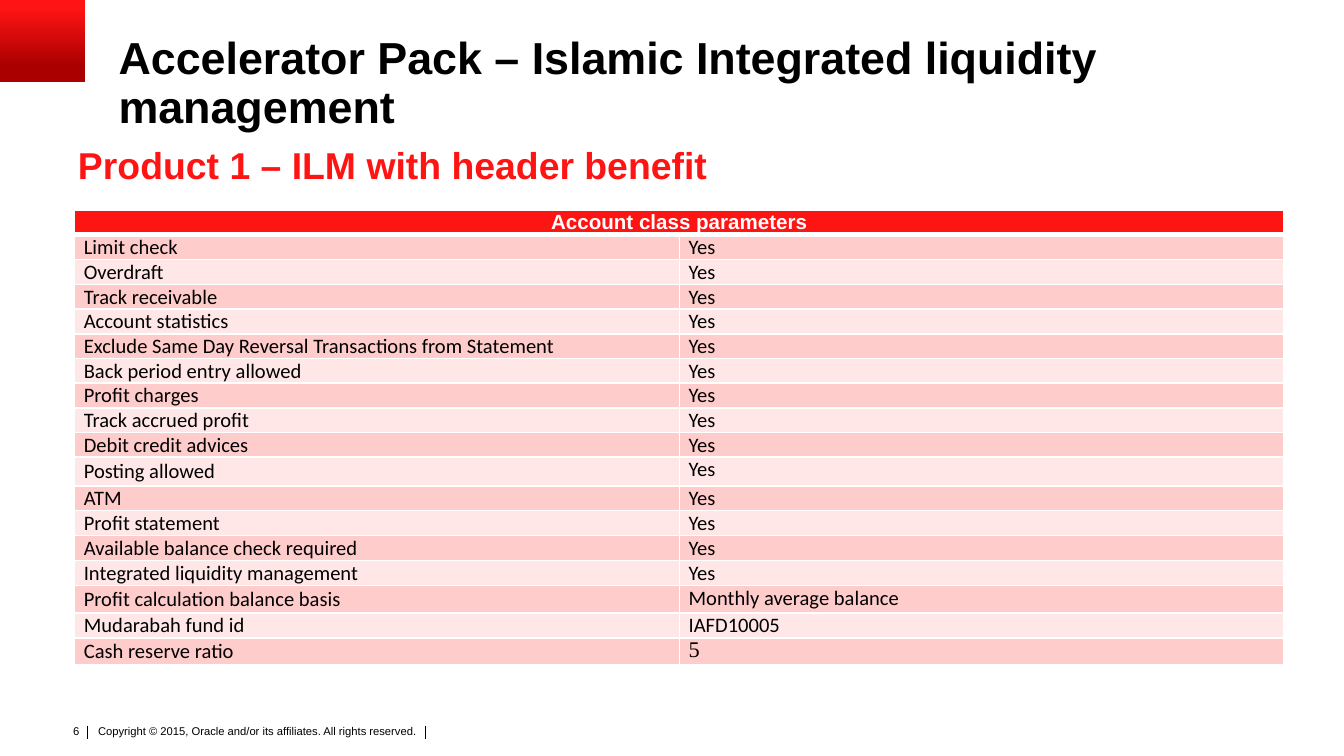
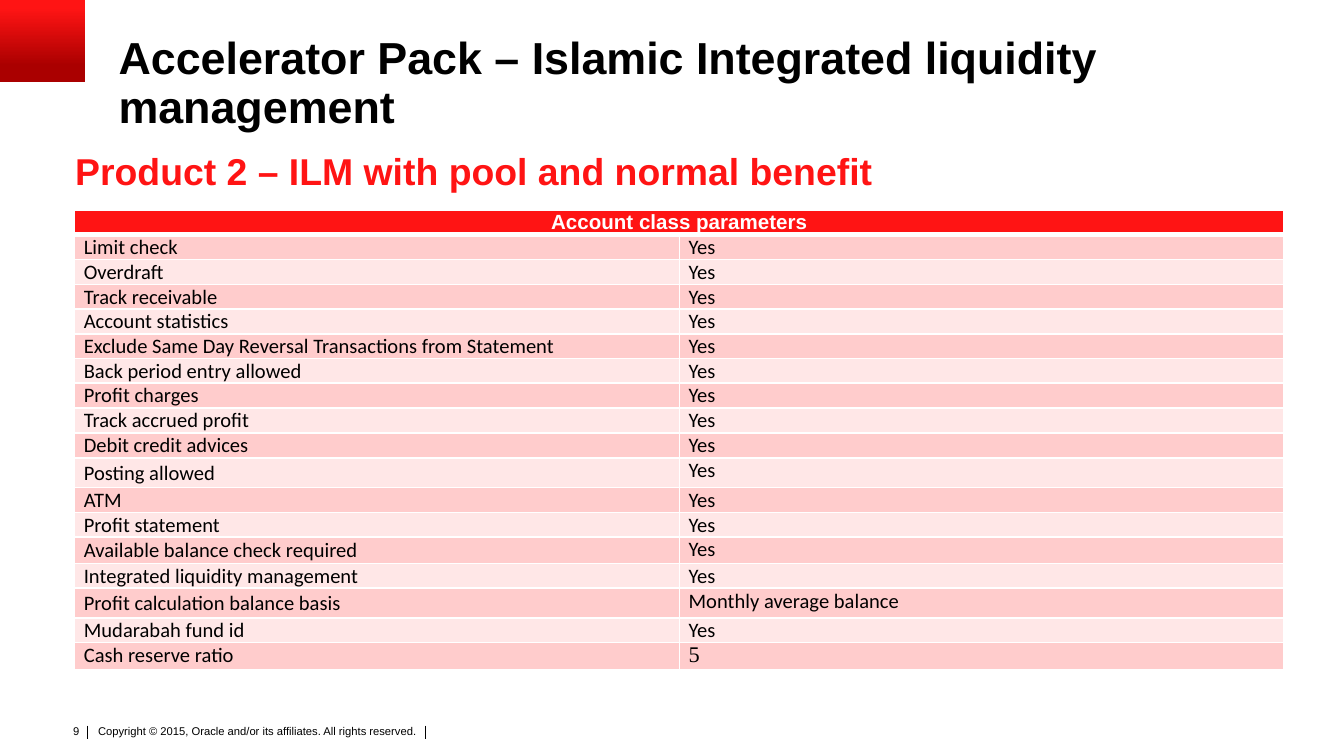
from lxml.etree import SubElement
from pptx import Presentation
from pptx.dml.color import RGBColor
from pptx.enum.shapes import MSO_CONNECTOR as CONN, MSO_SHAPE as SHAPE
from pptx.enum.text import MSO_ANCHOR as ANCHOR, MSO_AUTO_SIZE as AUTO, PP_ALIGN as ALIGN
from pptx.oxml.ns import qn
from pptx.util import Pt

# Shared colours, text styles and wording
RED, DARK_RED, BLACK, WHITE = "FF1414", "AA0000", "000000", "FFFFFF"
BANDS = ("FFCCCC", "FFE7E7")
TITLE_FONT = dict(name="Arial", size=Pt(24), bold=True)
SUBTITLE_FONT = dict(name="Arial", size=Pt(20), bold=True)
HEADER_FONT = dict(name="Arial", size=Pt(11), bold=True)
CELL_FONT = dict(name="Calibri", size=Pt(11), bold=False)
RATIO_FONT = dict(name="Times New Roman", size=Pt(12), bold=False)
FOOTER_FONT = dict(name="Arial", size=Pt(6), bold=False)

TITLE = "Accelerator Pack – Islamic Integrated liquidity management"
COPYRIGHT = "Copyright © 2015, Oracle and/or its affiliates. All rights reserved."
YES_PARAMETERS = [
    "Limit check", "Overdraft", "Track receivable", "Account statistics",
    "Exclude Same Day Reversal Transactions from Statement",
    "Back period entry allowed", "Profit charges", "Track accrued profit",
    "Debit credit advices", "Posting allowed", "ATM", "Profit statement",
    "Available balance check required", "Integrated liquidity management",
]
ROW_HEIGHT = 13.25

# What differs between the slides; tall_rows maps row number to height
PRODUCTS = [
    dict(number="6", subtitle="Product 1 – ILM with header benefit",
         left=41.8, top=76.3, title_height=49, fund="IAFD10005",
         tall_rows={10: 15.4, 13: 13.5, 15: 14.9, 17: 13.6}),
    dict(number="9", subtitle="Product 2 – ILM with pool and normal benefit",
         left=40.3, top=79.2, title_height=31.7, fund="Yes",
         tall_rows={8: 13.5, 9: 13.5, 10: 15.8, 13: 14.2, 15: 15.8, 17: 13.6}),
]


def rgb(color):
    return RGBColor.from_string(color)


def set_attrs(obj, values):
    for name, value in values.items():
        setattr(obj, name, value)


def set_margins(obj, x, y):
    set_attrs(obj, dict(margin_left=Pt(x), margin_right=Pt(x),
                        margin_top=Pt(y), margin_bottom=Pt(y)))


def write(tf, text, font, color, **paragraph):
    p = tf.paragraphs[0]
    set_attrs(p, paragraph)
    r = p.add_run()
    r.text = text
    set_attrs(r.font, font)
    r.font.color.rgb = rgb(color)


def add_text(slide, box, text, font, color, margins=(0, 0), wrap=True, **paragraph):
    sp = slide.shapes.add_textbox(*map(Pt, box))
    sp.text_frame.word_wrap = wrap
    set_margins(sp.text_frame, *margins)
    write(sp.text_frame, text, font, color, **paragraph)


def add_title(slide, height):
    sp = slide.shapes.title
    set_attrs(sp, dict(left=Pt(63.5), top=Pt(19.4), width=Pt(648), height=Pt(height)))
    tf = sp.text_frame
    set_attrs(tf, dict(word_wrap=True, auto_size=AUTO.NONE, vertical_anchor=ANCHOR.TOP))
    set_margins(tf, 0, 0)
    write(tf, TITLE, TITLE_FONT, BLACK, alignment=ALIGN.LEFT, line_spacing=0.9)


def add_corner(slide):
    sp = slide.shapes.add_shape(SHAPE.RECTANGLE, 0, 0, Pt(45.5), Pt(44))
    sp.shadow.inherit = False
    sp.line.fill.background()
    sp.fill.gradient()
    sp.fill.gradient_angle = 90
    for stop, position, color in zip(sp.fill.gradient_stops, (0.2, 0.9), (DARK_RED, RED)):
        stop.position = position
        stop.color.rgb = rgb(color)


def add_divider(slide, x):
    line = slide.shapes.add_connector(CONN.STRAIGHT, Pt(x), Pt(388.8), Pt(x), Pt(396))
    line.line.width = Pt(0.5)
    line.line.color.rgb = rgb(BLACK)
    SubElement(line._element.spPr, qn("a:effectLst"))


def add_footer(slide, number):
    add_text(slide, (49.7, 386.6, 197.3, 17.3), COPYRIGHT, FOOTER_FONT, BLACK, (2.9, 1.45))
    for x in (46.8, 228):
        add_divider(slide, x)
    add_text(slide, (28.1, 384.5, 21.6, 14.4), number, FOOTER_FONT, BLACK, (7.2, 3.6),
             wrap=False, alignment=ALIGN.RIGHT)


def set_borders(cell, bottom=1):
    tcPr = cell._tc.get_or_add_tcPr()
    for side, width in dict(L=1, R=1, T=1, B=bottom).items():
        ln = SubElement(tcPr, qn(f"a:ln{side}"), w=str(Pt(width)))
        SubElement(SubElement(ln, qn("a:solidFill")), qn("a:srgbClr"), val=WHITE)


def format_cell(cell, fill, anchor=ANCHOR.MIDDLE, bottom=1):
    set_borders(cell, bottom)
    cell.fill.solid()
    cell.fill.fore_color.rgb = rgb(fill)
    cell.vertical_anchor = anchor
    set_margins(cell, 5, 0)


def add_parameters(slide, fund, tall_rows):
    rows = [(name, "Yes") for name in YES_PARAMETERS] + [
        ("Profit calculation balance basis", "Monthly average balance"),
        ("Mudarabah fund id", fund),
        ("Cash reserve ratio", "5"),
    ]
    heights = [tall_rows.get(i, ROW_HEIGHT) for i in range(len(rows) + 1)]
    table = slide.shapes.add_table(len(heights), 2, Pt(39.9), Pt(112.6),
                                   Pt(648), Pt(sum(heights))).table
    for row, height in zip(table.rows, heights):
        row.height = Pt(height)

    # Header across both columns
    header = table.cell(0, 0)
    header.merge(table.cell(0, 1))
    for col in range(2):
        format_cell(table.cell(0, col), RED, bottom=3)
    write(header.text_frame, "Account class parameters", HEADER_FONT, WHITE,
          alignment=ALIGN.CENTER, space_after=Pt(10))

    # Banded parameter rows
    for i, values in enumerate(rows, 1):
        for col, text in enumerate(values):
            cell = table.cell(i, col)
            top = col == 1 and i > 3
            format_cell(cell, BANDS[(i - 1) % 2], ANCHOR.TOP if top else ANCHOR.MIDDLE)
            font = RATIO_FONT if col == 1 and i == len(rows) else CELL_FONT
            write(cell.text_frame, text, font, BLACK, space_after=Pt(10))


def main():
    prs = Presentation()
    set_attrs(prs, dict(slide_width=Pt(720), slide_height=Pt(405)))
    for product in PRODUCTS:
        slide = prs.slides.add_slide(prs.slide_layouts[5])
        add_footer(slide, product["number"])
        add_corner(slide)
        add_title(slide, product["title_height"])
        add_parameters(slide, product["fund"], product["tall_rows"])
        add_text(slide, (product["left"], product["top"], 648, 23.8),
                 product["subtitle"], SUBTITLE_FONT, RED)
    prs.save("out.pptx")


if __name__ == "__main__":
    main()
